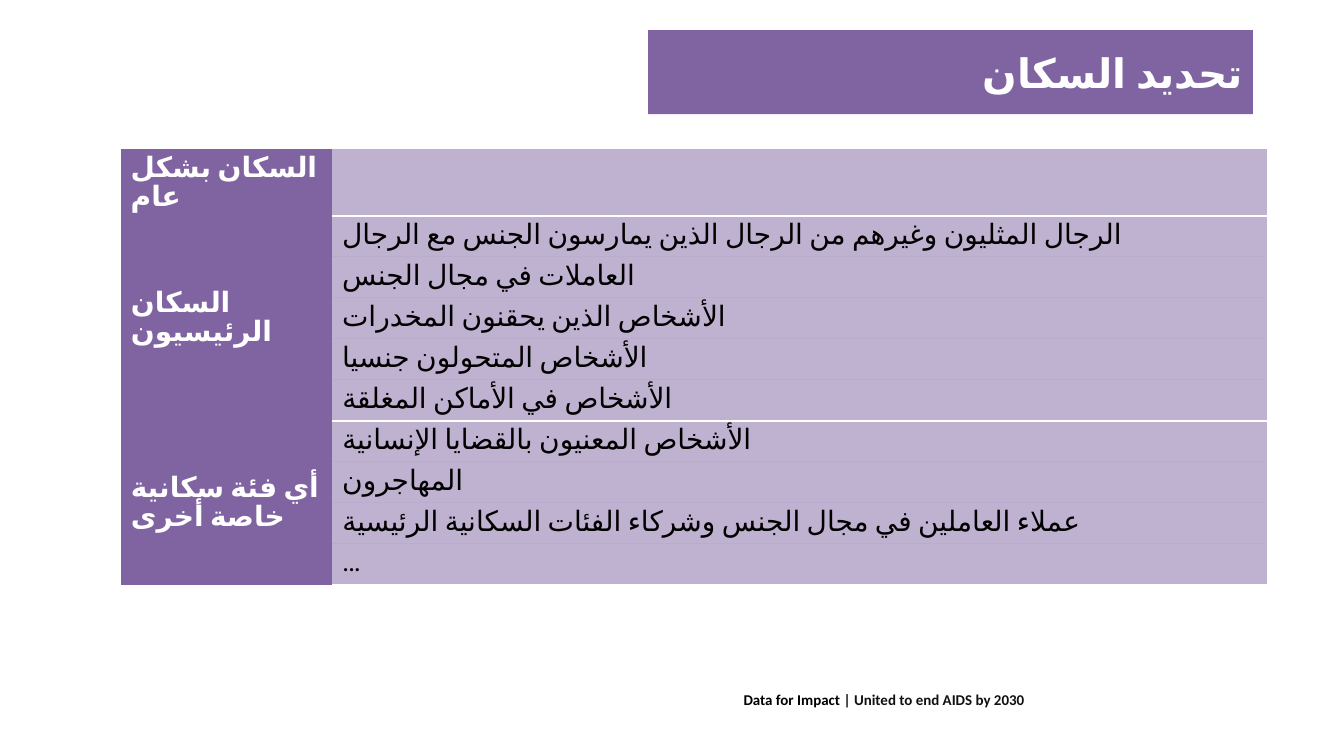
from dataclasses import dataclass

from lxml import etree
from pptx import Presentation
from pptx.dml.color import RGBColor
from pptx.enum.lang import MSO_LANGUAGE_ID
from pptx.enum.shapes import MSO_SHAPE
from pptx.enum.text import MSO_ANCHOR, PP_ALIGN
from pptx.oxml.ns import qn
from pptx.util import Pt

RECT = MSO_SHAPE.RECTANGLE
MIDDLE, TOP = MSO_ANCHOR.MIDDLE, MSO_ANCHOR.TOP
RIGHT = PP_ALIGN.RIGHT
ARABIC = MSO_LANGUAGE_ID.ARABIC

PURPLE = RGBColor(0x80, 0x64, 0xA2)
WHITE = RGBColor(0xFF, 0xFF, 0xFF)
BLACK = RGBColor(0, 0, 0)
INK = RGBColor(0x11, 0x11, 0x11)

FIRST_ROW, ROW = 46.8, 29.3
COLUMNS = (151, 668)


@dataclass(frozen=True)
class Group:
    name: str
    items: tuple[str, ...]


GROUPS = (
    Group("السكان بشكل عام", ("",)),
    Group("السكان الرئيسيون", (
        "الرجال المثليون وغيرهم من الرجال الذين يمارسون الجنس مع الرجال",
        "العاملات في مجال الجنس",
        "الأشخاص الذين يحقنون المخدرات",
        "الأشخاص المتحولون جنسيا",
        "الأشخاص في الأماكن المغلقة",
    )),
    Group("أي فئة سكانية خاصة أخرى", (
        "الأشخاص المعنيون بالقضايا الإنسانية",
        "المهاجرون",
        "عملاء العاملين في مجال الجنس وشركاء الفئات السكانية الرئيسية",
        "…",
    )),
)


def set_font(font, face: str, size: float, color: RGBColor, bold: bool) -> None:
    font.name, font.size, font.bold = face, Pt(size), bold
    font.color.rgb = color


def set_arabic(para, face: str, size: float, color: RGBColor,
               bold: bool) -> None:
    """Set the font of a paragraph for Arabic script too."""
    set_font(para.font, face, size, color, bold)
    props = para._p.pPr.find(qn("a:defRPr"))
    etree.SubElement(props, qn("a:cs"), typeface="Calibri")
    for run in para.runs:
        run.font.language_id = ARABIC


def set_edges(cell, white: str) -> None:
    """Draw white lines on the sides named in white, none on the rest."""
    props = cell._tc.get_or_add_tcPr()
    for side in "LRTB":
        line = etree.SubElement(props, qn(f"a:ln{side}"), w=str(Pt(1)))
        if side in white:
            fill = etree.SubElement(line, qn("a:solidFill"))
            etree.SubElement(fill, qn("a:srgbClr"), val=str(WHITE))
        else:
            etree.SubElement(line, qn("a:noFill"))


def fill_cell(cell, text: str, head: bool, white: str) -> None:
    set_edges(cell, white)
    cell.fill.solid()
    cell.fill.fore_color.rgb = PURPLE
    if not head:
        tint = cell._tc.tcPr.find(qn("a:solidFill"))[0]
        etree.SubElement(tint, qn("a:alpha"), val="50000")
    cell.margin_top = cell.margin_bottom = Pt(3.6)
    cell.vertical_anchor = MIDDLE if head else TOP
    cell.text = text
    para = cell.text_frame.paragraphs[0]
    para.line_spacing = 0.85
    set_arabic(para, "Calibri" if head else "Roboto", 20,
               WHITE if head else BLACK, head)


def add_title(slide) -> None:
    box = slide.shapes.add_shape(RECT, Pt(463), Pt(21.5), Pt(432), Pt(60))
    box.shadow.inherit = False
    box.fill.solid()
    box.fill.fore_color.rgb = PURPLE
    box.line.fill.background()
    box.text_frame.vertical_anchor = MIDDLE
    para = box.text_frame.paragraphs[0]
    para.text = "تحديد السكان"
    para.alignment = RIGHT
    set_arabic(para, "Calibri", 29, WHITE, True)


def add_groups(slide) -> None:
    count = sum(len(group.items) for group in GROUPS)
    height = FIRST_ROW + (count - 1) * ROW
    table = slide.shapes.add_table(count, 2, Pt(86.2), Pt(106.2),
                                   Pt(sum(COLUMNS)), Pt(height)).table
    table.first_row = table.horz_banding = False
    for column, width in zip(table.columns, COLUMNS):
        column.width = Pt(width)
    for index, row in enumerate(table.rows):
        row.height = Pt(ROW if index else FIRST_ROW)

    start = 0
    for group in GROUPS:
        last = start + len(group.items) - 1
        if last > start:
            table.cell(start, 0).merge(table.cell(last, 0))
        fill_cell(table.cell(start, 0), group.name, True, "")
        for index, item in enumerate(group.items, start):
            white = "R" + "T" * (index == start) + "B" * (index == last)
            fill_cell(table.cell(index, 1), item, False, white)
        start = last + 1


def add_footer(slide) -> None:
    box = slide.shapes.add_textbox(Pt(524), Pt(489.6), Pt(220.5), Pt(20))
    box.text_frame.word_wrap = True
    para = box.text_frame.paragraphs[0]
    for text, color in (("Data for Impact ", BLACK),
                        ("| United to end AIDS by 2030", INK)):
        run = para.add_run()
        run.text = text
        set_font(run.font, "Calibri", 10.7, color, True)


def main() -> None:
    deck = Presentation()
    deck.slide_width, deck.slide_height = Pt(960), Pt(540)
    slide = deck.slides.add_slide(deck.slide_layouts[6])
    add_footer(slide)
    add_title(slide)
    add_groups(slide)
    deck.save("out.pptx")


if __name__ == "__main__":
    main()
